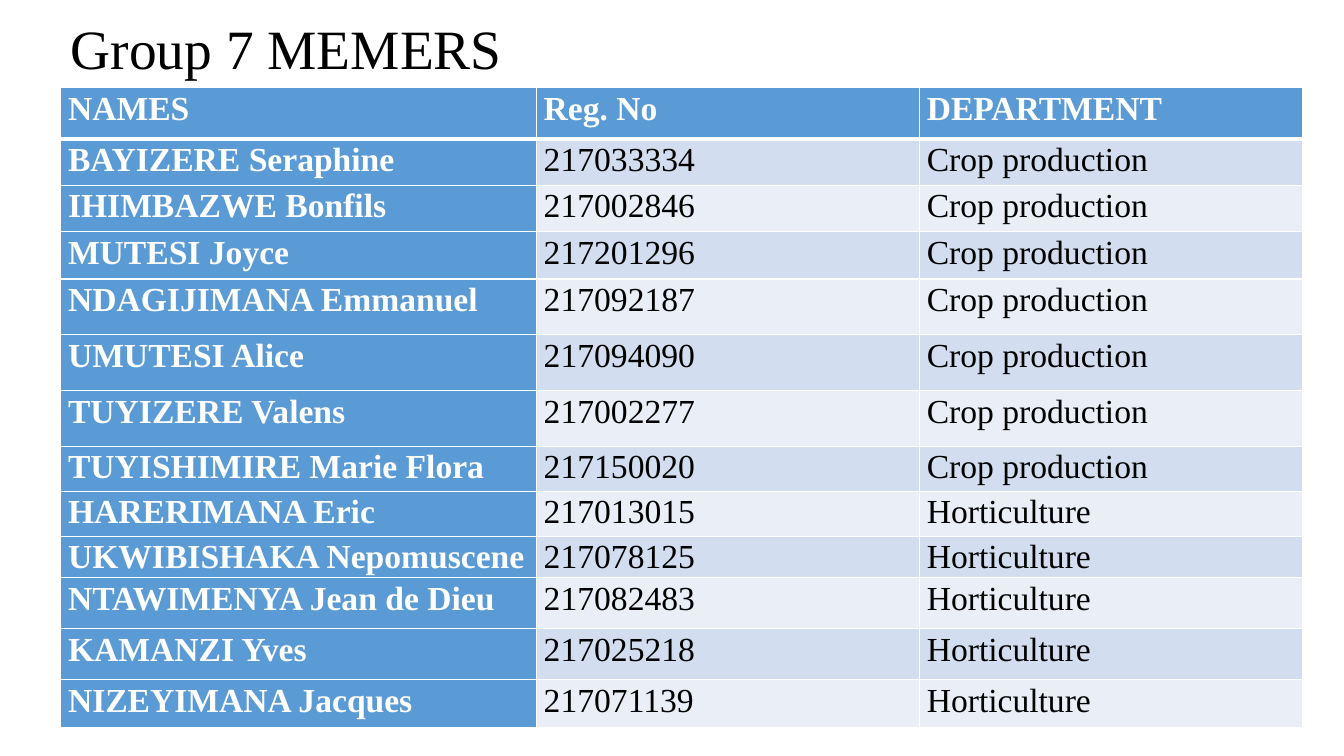
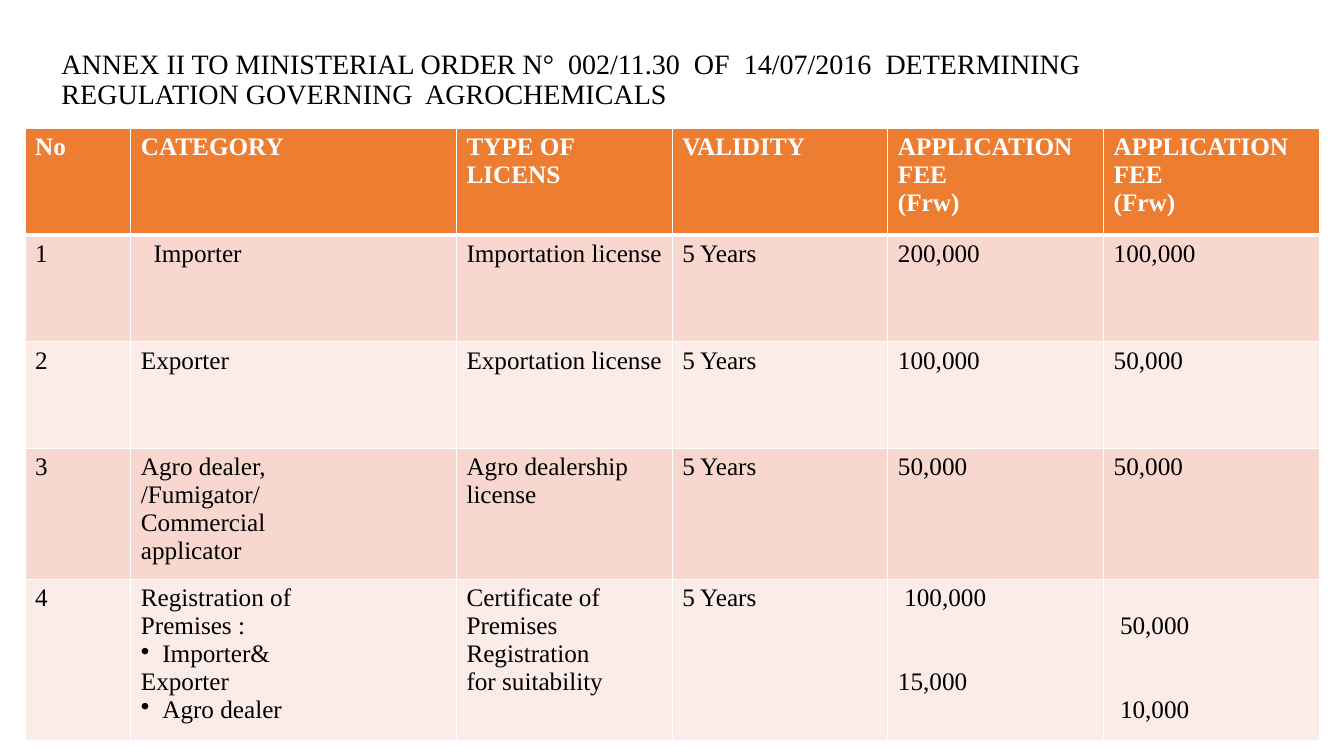
from lxml.etree import SubElement as Sub
from pptx import Presentation
from pptx.dml.color import RGBColor
from pptx.enum.text import MSO_ANCHOR as Anchor, MSO_AUTO_SIZE as Auto, PP_ALIGN as Align
from pptx.oxml.ns import qn
from pptx.util import Pt

FONT = "Times New Roman"
BLACK, WHITE = "000000", "FFFFFF"
BLUE, BLUES = "5B9BD5", ("D2DEEF", "EAEFF7")
ORANGE, PEACH = "ED7D31", ("F8D7CE", "FCECE8")
LINE, INSET = 20, 3.6
BULLET = dict(indent=15.3, bullet="•")
NUDGE = dict(indent=4.5)

HEADS = ("NAMES", "Reg. No", "DEPARTMENT")
CROP = (
    ("BAYIZERE Seraphine", "217033334"),
    ("IHIMBAZWE Bonfils", "217002846"),
    ("MUTESI Joyce", "217201296"),
    ("NDAGIJIMANA Emmanuel", "217092187"),
    ("UMUTESI Alice", "217094090"),
    ("TUYIZERE Valens", "217002277"),
    ("TUYISHIMIRE Marie Flora", "217150020"),
)
HORT = (
    ("HARERIMANA Eric", "217013015"),
    ("UKWIBISHAKA Nepomuscene", "217078125"),
    ("NTAWIMENYA Jean de Dieu", "217082483"),
    ("KAMANZI Yves", "217025218"),
    ("NIZEYIMANA Jacques", "217071139"),
)
FEE = ["APPLICATION FEE", "(Frw)"]
TERM = "5 Years"
ORDER = ("ANNEX II TO MINISTERIAL ORDER N°  002/11.30  OF  14/07/2016  "
         "DETERMINING REGULATION GOVERNING  AGROCHEMICALS")
FEES = (
    ("No", "CATEGORY", "TYPE OF LICENS", "VALIDITY", FEE, FEE),
    ("1", [("Importer", dict(indent=9))], "Importation license", TERM, "200,000", "100,000"),
    ("2", "Exporter", "Exportation license", TERM, "100,000", "50,000"),
    ("3", ["Agro dealer,", "/Fumigator/", "Commercial", "applicator"],
     ["Agro dealership", "license"], TERM, "50,000", "50,000"),
    ("4",
     ["Registration of", "Premises :", ("Importer&", BULLET), "Exporter",
      ("Agro dealer", BULLET)],
     ["Certificate of", "Premises Registration", "for suitability"], TERM,
     [("100,000", NUDGE), ("15,000", dict(before=2 * LINE))],
     [("50,000", NUDGE), ("10,000", dict(NUDGE, before=2 * LINE))]),
)


def color(code):
    return RGBColor.from_string(code)


def write(para, text, size=18, ink=BLACK, bold=False, lead=None,
          before=0, after=0, indent=0, bullet=None):
    para.alignment = Align.LEFT
    para.space_before, para.space_after = Pt(before), Pt(after)
    if lead:
        para.line_spacing = lead
    if indent:
        props = para._p.get_or_add_pPr()
        props.set("marL", str(Pt(indent)))
        if bullet:
            props.set("indent", str(-Pt(indent)))
            Sub(props, qn("a:buChar"), char=bullet)
    run = para.add_run()
    run.text = text
    font = run.font
    font.name, font.size, font.bold = FONT, Pt(size), bold
    font.color.rgb = color(ink)


def title(slide, text, box, size):
    shape = slide.shapes.title
    shape.left, shape.top, shape.width, shape.height = map(Pt, box)
    frame = shape.text_frame
    frame.word_wrap, frame.auto_size = True, Auto.NONE
    frame.vertical_anchor = Anchor.MIDDLE
    write(frame.paragraphs[0], text, size=size, lead=0.9)


def border(cell, head):
    props = cell._tc.get_or_add_tcPr()
    for side in "LRTB":
        width = 3 if head and side == "B" else 1
        line = Sub(props, qn("a:ln" + side), w=str(Pt(width)))
        Sub(Sub(line, qn("a:solidFill")), qn("a:srgbClr"), val=WHITE)


def fill(cell, value, tone, **style):
    cell.fill.solid()
    cell.fill.fore_color.rgb = color(tone)
    items = [value] if isinstance(value, str) else value
    frame = cell.text_frame
    for i, item in enumerate(items):
        text, extra = (item, {}) if isinstance(item, str) else item
        para = frame.add_paragraph() if i else frame.paragraphs[0]
        write(para, text, **{**style, **extra})


def grid(slide, rows, spot, widths, heights, main, bands,
         side=False, inset=None, **style):
    left, top = spot
    table = slide.shapes.add_table(
        len(rows), len(widths), Pt(left), Pt(top),
        Pt(sum(widths)), Pt(sum(heights))).table
    table.first_col = side
    for col, width in zip(table.columns, widths):
        col.width = Pt(width)
    for r, row in enumerate(rows):
        table.rows[r].height = Pt(heights[r])
        for c, value in enumerate(row):
            cell = table.cell(r, c)
            strong = r == 0 or (side and c == 0)
            if inset:
                cell.margin_left = cell.margin_right = Pt(inset)
                cell.margin_top = cell.margin_bottom = 0
            border(cell, r == 0)
            fill(cell, value, main if strong else bands[(r - 1) % 2],
                 ink=WHITE if strong else BLACK, bold=strong, **style)
    return table


def team(slide):
    title(slide, "Group 7 MEMERS", (43.2, 11.5, 828, 51), 39.6)
    rows = [HEADS]
    for field, people in (("Crop production", CROP), ("Horticulture", HORT)):
        rows += [(*who, field) for who in people]
    heights = [36.6, 33.1, 33.1, 33.8, *[39.8] * 3, 32.2, 32.2, 29.6, 36.4, 36.4, 34.4]
    grid(slide, rows, (43.4, 62.8), (339.8, 273.6, 273.6), heights,
         BLUE, BLUES, side=True, inset=5.2, size=24, lead=1.07, after=8)


def annex(slide):
    title(slide, ORDER, (36.7, 0.7, 857.5, 113.8), 20)
    table = grid(slide, FEES, (17.9, 91.4), (75.6, 232.6, *[154.1] * 4),
                 (*[76.3] * 3, 93.6, 115.4), ORANGE, PEACH)
    table.cell(4, 5).margin_top = Pt(INSET + LINE)


def main():
    deck = Presentation()
    deck.slide_width, deck.slide_height = Pt(960), Pt(540)
    for build in (team, annex):
        build(deck.slides.add_slide(deck.slide_layouts[5]))
    deck.save("out.pptx")


if __name__ == "__main__":
    main()
